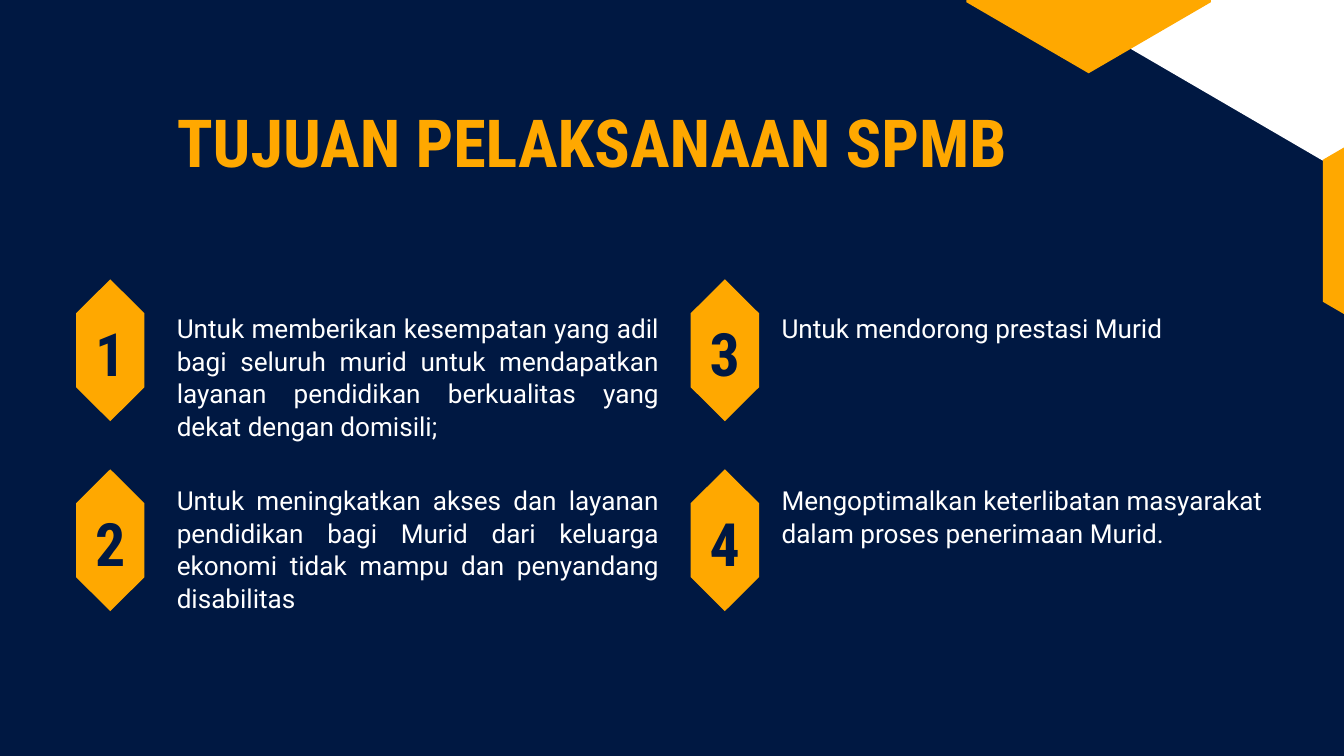
from dataclasses import dataclass

from pptx import Presentation
from pptx.dml.color import RGBColor
from pptx.enum.text import MSO_AUTO_SIZE as AutoSize, PP_ALIGN as Align
from pptx.util import Pt


@dataclass(frozen=True)
class Theme:
    navy: RGBColor = RGBColor(0x00, 0x18, 0x42)
    amber: RGBColor = RGBColor(0xFF, 0xA8, 0x00)
    white: RGBColor = RGBColor(0xFF, 0xFF, 0xFF)
    heading_font: str = "Roboto Condensed"
    body_font: str = "Roboto"
    title_size: float = 71
    number_size: float = 64
    body_size: float = 28


class SlideBuilder:
    def __init__(self, slide, theme):
        self.slide = slide
        self.theme = theme
        heading = {"name": theme.heading_font, "bold": True}
        # Each style: font values, font colour, line spacing
        self.styles = {
            "title": ({**heading, "size": Pt(theme.title_size)}, theme.amber, 73.1),
            "number": ({**heading, "size": Pt(theme.number_size)}, theme.navy, 89.6),
            "body": ({"name": theme.body_font, "size": Pt(theme.body_size)},
                     theme.white, 35),
        }

    def background(self, color):
        fill = self.slide.background.fill
        fill.solid()
        fill.fore_color.rgb = color

    def hexagon(self, left, top, width, height, shoulder, color):
        """Hexagon with points at top and bottom and upright sides."""
        middle, right, bottom = left + width / 2, left + width, top + height
        corners = [(middle, top), (right, top + shoulder), (right, bottom - shoulder),
                   (middle, bottom), (left, bottom - shoulder), (left, top + shoulder)]
        points = [(Pt(x), Pt(y)) for x, y in corners]
        builder = self.slide.shapes.build_freeform(*points[0])
        builder.add_line_segments(points[1:], close=True)
        shape = builder.convert_to_shape()
        shape.shadow.inherit = False
        shape.fill.solid()
        shape.fill.fore_color.rgb = color
        shape.line.fill.background()

    def text(self, content, left, top, width, height, style, align=Align.LEFT):
        box = self.slide.shapes.add_textbox(Pt(left), Pt(top), Pt(width), Pt(height))
        frame = box.text_frame
        frame_format = {"word_wrap": True, "auto_size": AutoSize.SHAPE_TO_FIT_TEXT,
                        "margin_left": 0, "margin_top": 0,
                        "margin_right": 0, "margin_bottom": 0}
        for name, value in frame_format.items():
            setattr(frame, name, value)
        font_format, color, spacing = self.styles[style]
        paragraph = frame.paragraphs[0]
        paragraph.alignment = align
        paragraph.line_spacing = Pt(spacing)
        run = paragraph.add_run()
        run.text = content
        for name, value in font_format.items():
            setattr(run.font, name, value)
        run.font.color.rgb = color


# Goals in reading order: down the left column, then down the right
GOALS = [
    ("Untuk memberikan kesempatan yang adil bagi seluruh murid untuk mendapatkan "
     "layanan pendidikan berkualitas yang dekat dengan domisili;", 174.2, Align.JUSTIFY),
    ("Untuk meningkatkan akses dan layanan pendidikan bagi Murid dari keluarga "
     "ekonomi tidak mampu dan penyandang disabilitas", 174.2, Align.JUSTIFY),
    ("Untuk mendorong prestasi Murid", 67.7, Align.JUSTIFY),
    ("Mengoptimalkan keterlibatan masyarakat dalam proses penerimaan Murid.",
     139, Align.LEFT),
]
BADGE_LEFTS, BADGE_TOPS = (81.5, 740), (299.3, 502.8)
TEXT_LEFTS, TEXT_TOPS = (189.4, 837.4), (333.4, 517.7)


def main():
    presentation = Presentation()
    presentation.slide_width, presentation.slide_height = Pt(1440), Pt(810)
    slide = presentation.slides.add_slide(presentation.slide_layouts[6])
    theme = Theme()
    builder = SlideBuilder(slide, theme)
    builder.background(theme.navy)

    # Title
    builder.text("TUJUAN PELAKSANAAN SPMB", 189.4, 121, 996.5, 76.3, "title")

    # Numbered goals
    for index, (goal, height, align) in enumerate(GOALS):
        column, row = divmod(index, 2)
        left, top = BADGE_LEFTS[column], BADGE_TOPS[row]
        builder.hexagon(left, top, 73.3, 152, 36.4, theme.amber)
        builder.text(str(index + 1), left + 8.8, top + 27.7, 55.4, 86.4,
                     "number", Align.CENTER)
        builder.text(goal, TEXT_LEFTS[column], TEXT_TOPS[row], 516.2, height,
                     "body", align)

    # Corner hexagons
    for left, top, width, height, color in [
        (1206, -319.7, 422.6, 491.8, theme.white),
        (1035.4, -226.1, 262, 304.6, theme.amber),
        (1417.5, 95, 262, 304.6, theme.amber),
    ]:
        builder.hexagon(left, top, width, height, height / 4, color)

    presentation.save("out.pptx")


if __name__ == "__main__":
    main()
